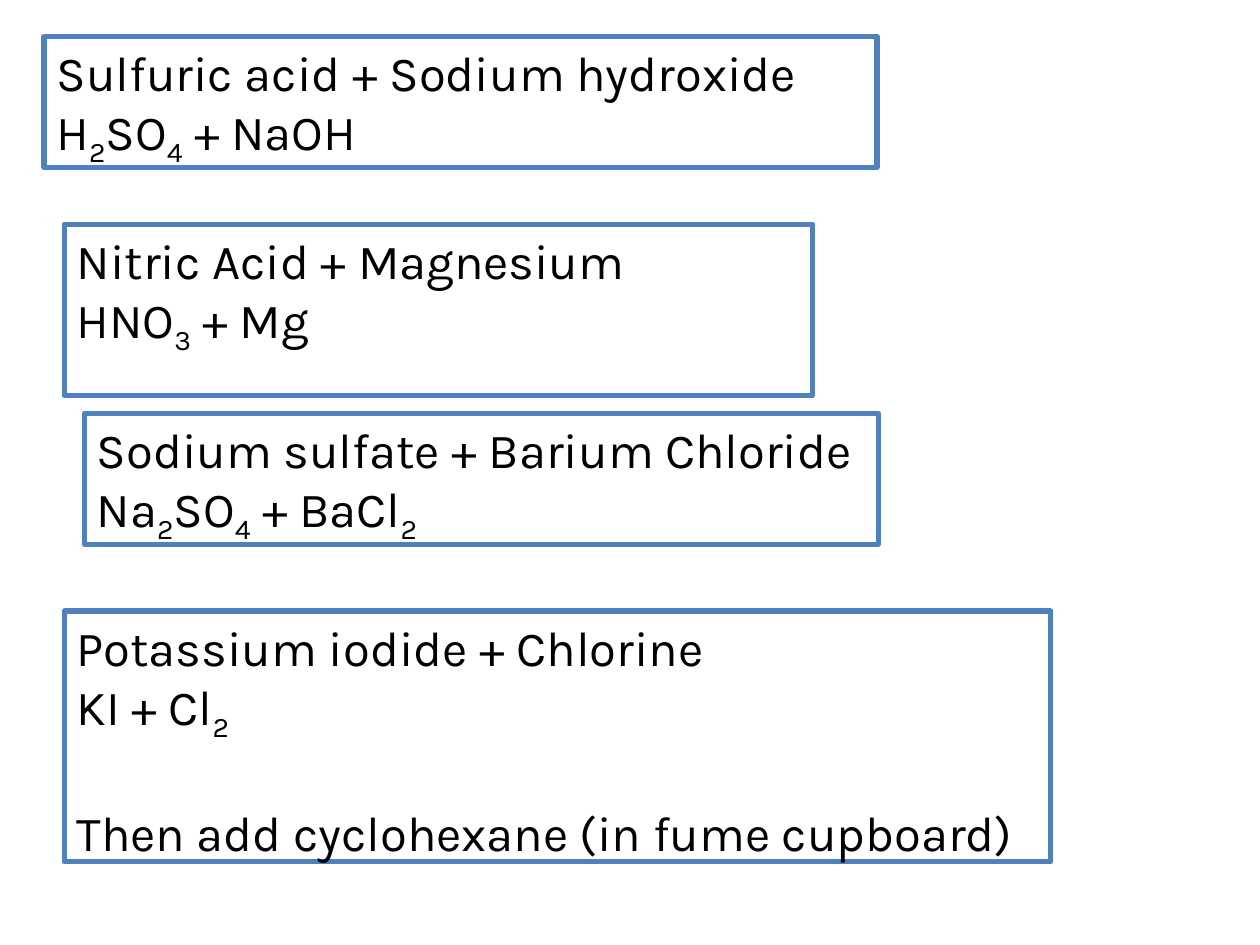
from pptx import Presentation
from pptx.dml.color import RGBColor
from pptx.enum.text import MSO_ANCHOR
from pptx.util import Inches, Pt


def color(hex_string):
    return RGBColor.from_string(hex_string)


class ReactionSlide:
    """Holds the style and the current slide."""

    font_name = "Karla"
    font_size = Pt(28)
    text_color = "000000"
    border_color = "4F81BD"
    border_width = Pt(3)

    def __init__(self, presentation):
        self.slide = presentation.slides.add_slide(presentation.slide_layouts[6])

    def add_box(self, left, top, width, height, lines):
        """Add an outlined text box and return its paragraphs."""
        shape = self.slide.shapes.add_textbox(
            Inches(left), Inches(top), Inches(width), Inches(height))
        shape.line.color.rgb = color(self.border_color)
        shape.line.width = self.border_width
        text_frame = shape.text_frame
        text_frame.word_wrap = True
        text_frame.vertical_anchor = MSO_ANCHOR.TOP
        for index, line in enumerate(lines):
            paragraph = text_frame.add_paragraph() if index else text_frame.paragraphs[0]
            self.write_formula(paragraph, line)
        return text_frame.paragraphs

    def write_formula(self, paragraph, text):
        """Write text in which "_" lowers the character after it."""
        font = paragraph.font
        font.name = self.font_name
        font.size = self.font_size
        font.color.rgb = color(self.text_color)
        first, *rest = text.split("_")
        paragraph.add_run().text = first
        for part in rest:
            subscript = paragraph.add_run()
            subscript.text = part[0]
            subscript._r.get_or_add_rPr().set("baseline", "-25000")
            if part[1:]:
                paragraph.add_run().text = part[1:]


def main():
    presentation = Presentation()
    presentation.slide_width = Inches(10)
    presentation.slide_height = Inches(7.5)
    reactions = ReactionSlide(presentation)

    # Nitric acid box
    reactions.add_box(0.51, 1.78, 5.94, 1.36, [
        "Nitric Acid + Magnesium", "HNO_3 + Mg"])

    # Sulfuric acid box
    reactions.add_box(0.35, 0.29, 6.61, 1.04, [
        "Sulfuric acid + Sodium hydroxide", "H_2SO_4 + NaOH"])

    # Sodium sulfate box
    reactions.add_box(0.67, 3.28, 6.3, 1.04, [
        "Sodium sulfate + Barium Chloride", "Na_2SO_4 + BaCl_2"])

    # Potassium iodide box, with a gap above the last line
    paragraphs = reactions.add_box(0.51, 4.85, 7.83, 1.99, [
        "Potassium iodide + Chlorine", "KI + Cl_2",
        "Then add cyclohexane (in fume cupboard)"])
    paragraphs[-1].space_before = Pt(34)

    presentation.save("out.pptx")


if __name__ == "__main__":
    main()
